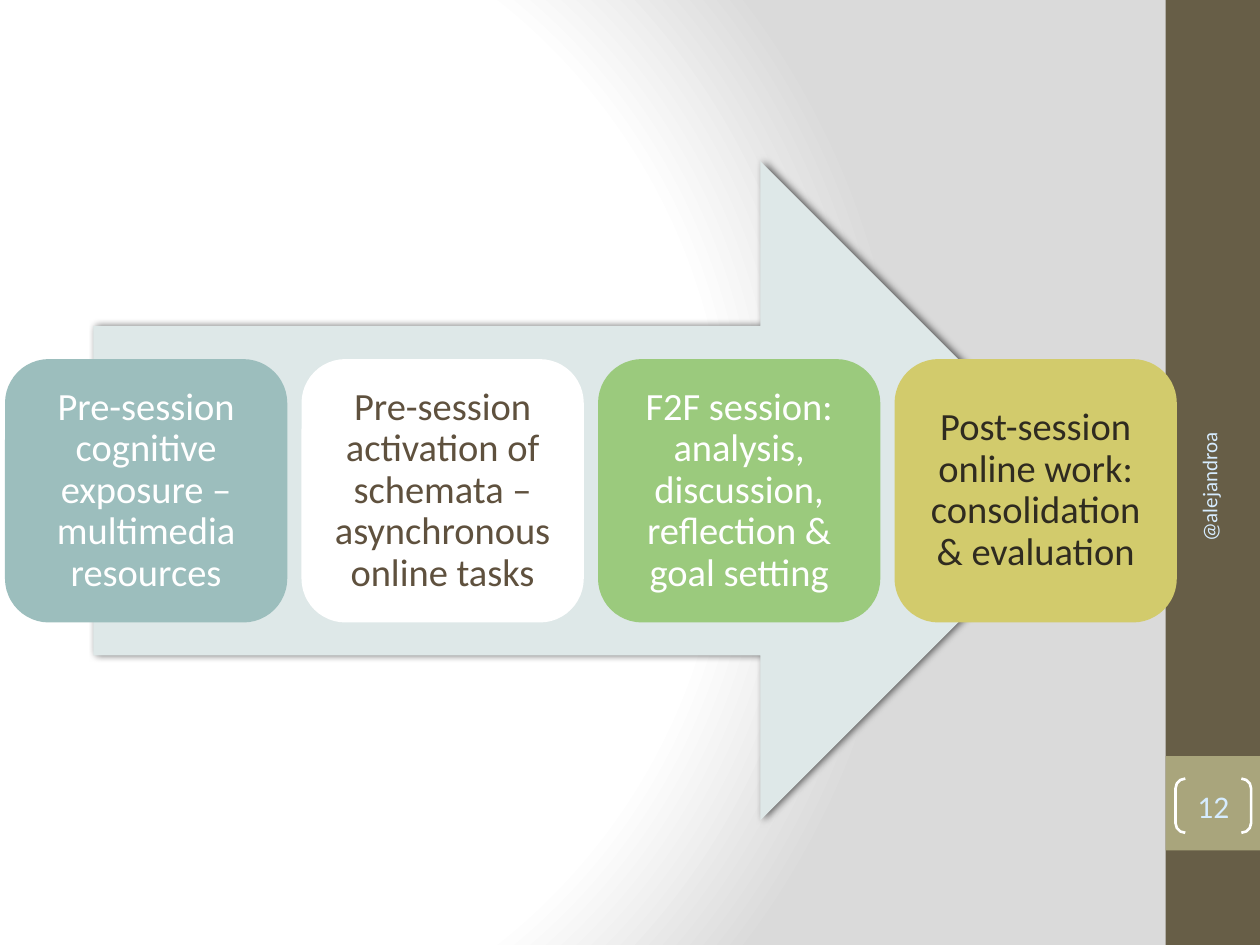
import pptx
import pptx.dml.color
import pptx.enum.shapes
import pptx.enum.text
import pptx.oxml
import pptx.oxml.ns
import pptx.util

Inches = pptx.util.Inches
RGBColor = pptx.dml.color.RGBColor
SHAPE = pptx.enum.shapes.MSO_SHAPE
ALIGN = pptx.enum.text.PP_ALIGN

BROWN = RGBColor(0x67, 0x5E, 0x47)
KHAKI = RGBColor(0xA9, 0xA5, 0x7C)
PALE_TEAL = RGBColor(0xDE, 0xE8, 0xE8)
TEAL = RGBColor(0x9C, 0xBE, 0xBD)
GREEN = RGBColor(0x9B, 0xCA, 0x7D)
MUSTARD = RGBColor(0xD2, 0xCB, 0x6C)
WHITE = RGBColor(0xFF, 0xFF, 0xFF)
TAUPE = RGBColor(0x5F, 0x51, 0x3E)
DARK = RGBColor(0x2F, 0x2B, 0x20)
PALE_BLUE = RGBColor(0xD6, 0xEC, 0xFF)

STAGES = [
    ("Pre-session cognitive exposure – multimedia resources", TEAL, WHITE),
    ("Pre-session activation of schemata – asynchronous online tasks", WHITE, TAUPE),
    ("F2F session: analysis, discussion, reflection & goal setting", GREEN, WHITE),
    ("Post-session online work: consolidation & evaluation", MUSTARD, DARK),
]

BACKDROP = f"""<a:gradFill {pptx.oxml.ns.nsdecls('a')} rotWithShape="1">
  <a:gsLst>
    <a:gs pos="0"><a:srgbClr val="FFFFFF"/></a:gs>
    <a:gs pos="75000"><a:srgbClr val="FFFFFF"/></a:gs>
    <a:gs pos="100000"><a:srgbClr val="DADADA"/></a:gs>
  </a:gsLst>
  <a:path path="circle"><a:fillToRect l="20000" t="50000" r="100000" b="50000"/></a:path>
</a:gradFill>"""

ARROW_SHADOW = f"""<a:outerShdw {pptx.oxml.ns.nsdecls('a')}
  blurRad="50800" dist="25400" dir="0" rotWithShape="0">
  <a:srgbClr val="000000"><a:alpha val="60000"/></a:srgbClr>
</a:outerShdw>"""


def paint_background(page):
    """Give the page its circular white-to-grey gradient."""
    page.background.fill.gradient()
    gradient = page.element.find(".//" + pptx.oxml.ns.qn("a:gradFill"))
    gradient.getparent().replace(gradient, pptx.oxml.parse_xml(BACKDROP))


def add_block(page, kind, left, top, width, height, color=None):
    """Add a flat shape without outline, filled if a colour is given."""
    block = page.shapes.add_shape(
        kind, Inches(left), Inches(top), Inches(width), Inches(height))
    block.shadow.inherit = False
    block.line.fill.background()
    if color is None:
        block.fill.background()
    else:
        block.fill.solid()
        block.fill.fore_color.rgb = color
    return block


def write_text(box, text, size, color, align=ALIGN.CENTER, inset=0.0):
    """Write one wrapped, vertically centred paragraph in a box."""
    frame = box.text_frame
    frame.text = text
    frame.word_wrap = True
    frame.vertical_anchor = pptx.enum.text.MSO_ANCHOR.MIDDLE
    frame.margin_left = frame.margin_right = Inches(inset)
    frame.margin_top = frame.margin_bottom = Inches(inset)
    para = frame.paragraphs[0]
    para.alignment = align
    font = para.runs[0].font
    font.name = "Calibri"
    font.size = pptx.util.Pt(size)
    font.color.rgb = color
    return para


def add_sidebar(page, left, top, width, height):
    """Add the side band with its page number and rotated handle."""
    add_block(page, SHAPE.RECTANGLE, left, top, width, height, BROWN)
    add_block(page, SHAPE.RECTANGLE, left, top + 6, width, width, KHAKI)
    brackets = add_block(
        page, SHAPE.DOUBLE_BRACKET, left + 0.08, top + 6.18, 0.6, 0.43)
    brackets.adjustments[0] = 0.18
    brackets.line.color.rgb = WHITE
    brackets.line.width = pptx.util.Pt(1.5)
    write_text(brackets, "12", 18, PALE_BLUE)
    handle = page.shapes.add_textbox(
        Inches(left - 0.95), Inches(top + 4.43), Inches(2.59), Inches(0.4))
    handle.rotation = 270
    write_text(handle, "@alejandroa", 12, PALE_BLUE, ALIGN.RIGHT, 0.1)


def add_process(page, left, top, width, height):
    """Add the big arrow with a row of stage cards across its middle."""
    arrow = add_block(
        page, SHAPE.RIGHT_ARROW, left + 0.7, top, width - 1.39, height, PALE_TEAL)
    effects = arrow.element.spPr.find(pptx.oxml.ns.qn("a:effectLst"))
    effects.append(pptx.oxml.parse_xml(ARROW_SHADOW))
    card_width, card_height = 2.24, 2.09
    step = (width - card_width) / (len(STAGES) - 1)
    card_top = top + (height - card_height) / 2
    for index, (text, fill, ink) in enumerate(STAGES):
        card = add_block(page, SHAPE.ROUNDED_RECTANGLE, left + index * step,
                         card_top, card_width, card_height, fill)
        para = write_text(card, text, 22, ink, inset=0.09)
        para.line_spacing = 0.9


def main():
    """Build the slide and save it."""
    deck = pptx.Presentation()
    deck.slide_width = Inches(10)
    deck.slide_height = Inches(7.5)
    page = deck.slides.add_slide(deck.slide_layouts[6])
    paint_background(page)
    add_sidebar(page, 9.25, 0, 0.75, 7.5)
    add_process(page, 0.04, 1.28, 9.3, 5.23)
    deck.save("out.pptx")


if __name__ == "__main__":
    main()
